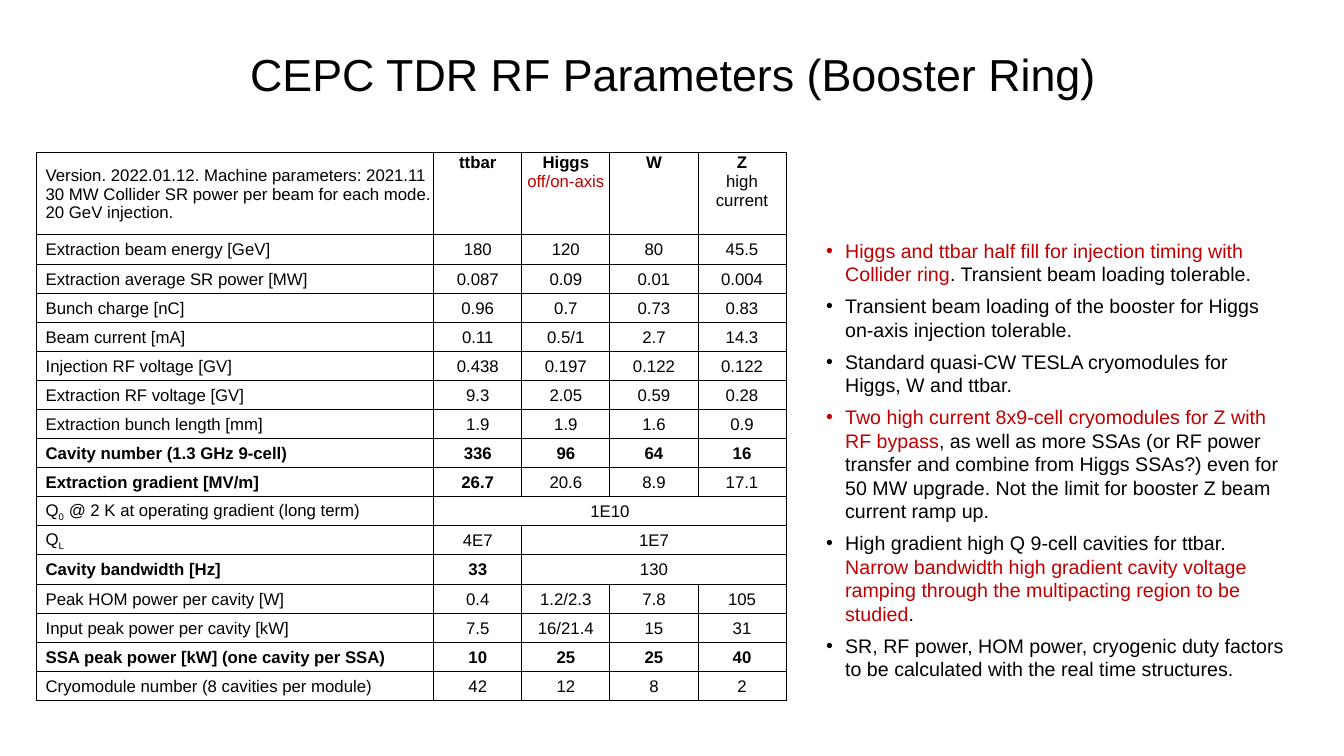
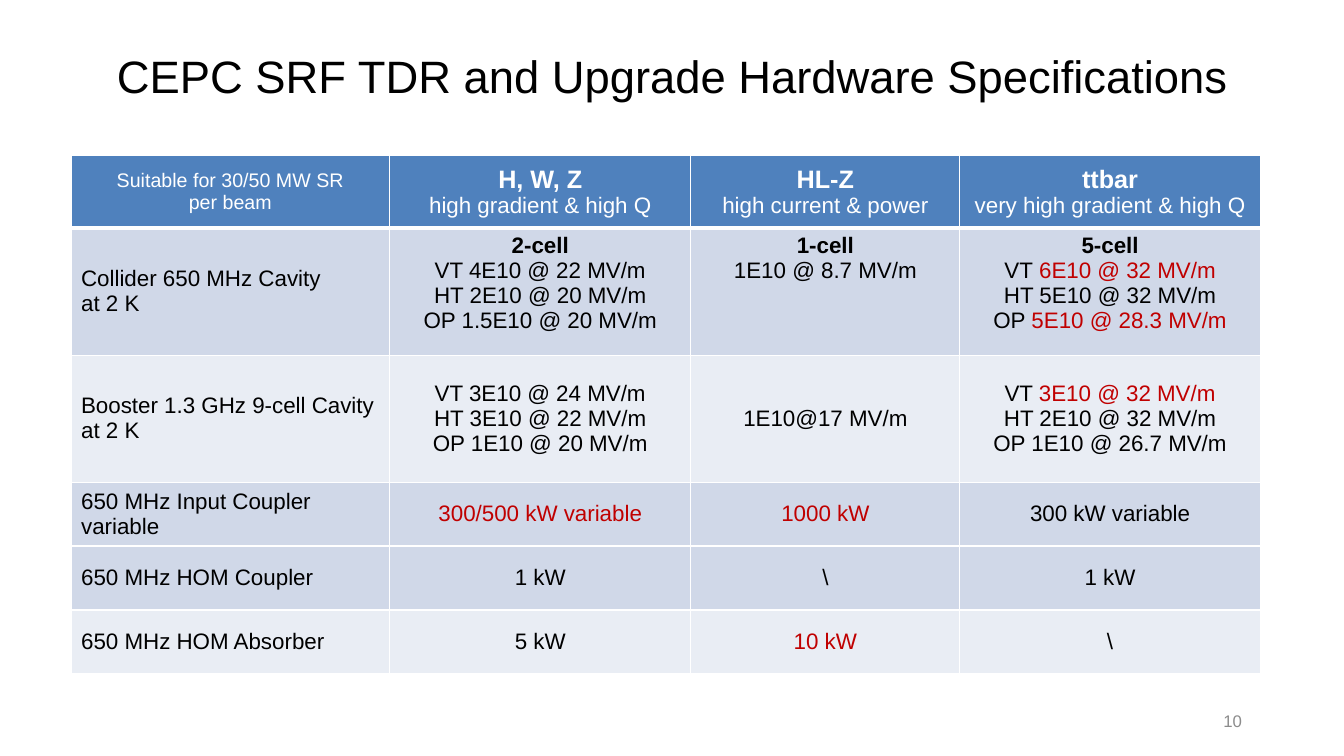
from lxml import etree
from pptx import Presentation
from pptx.dml.color import RGBColor
from pptx.enum.text import MSO_ANCHOR, PP_ALIGN
from pptx.oxml.ns import qn
from pptx.util import Cm, Pt

LEFT, CENTER, RIGHT = PP_ALIGN.LEFT, PP_ALIGN.CENTER, PP_ALIGN.RIGHT
TOP, MIDDLE = MSO_ANCHOR.TOP, MSO_ANCHOR.MIDDLE

FONT = "Arial"
BLACK, WHITE, GREY = "000000", "FFFFFF", "8C8C8C"
HEADER_BLUE, BAND_DARK, BAND_LIGHT = "4F81BD", "D0D8E8", "E9EDF4"

# Run styles
BOLD = {"bold": True}
RED = {"color": "C00000"}
SUB = {"baseline": -25000}
SMALL = {"size": 14}
HEADING = {"size": 18, "bold": True}

# A text is a string or a list of paragraphs; a paragraph is a string or a
# list of runs; a run is a string or a (string, style) pair.
BOOSTER_TITLE = "CEPC TDR RF Parameters (Booster Ring)"
BOOSTER_HEADER = [
    ["Version. 2022.01.12. Machine parameters: 2021.11",
     "30 MW Collider SR power per beam for each mode.",
     "20 GeV injection."],
    [[("ttbar", BOLD)]],
    [[("Higgs", BOLD)], [("off/on-axis", RED)]],
    [[("W", BOLD)]],
    [[("Z", BOLD)], "high current"],
]
# Label, values (the last one spans the remaining columns), number of bold cells
BOOSTER_ROWS = [
    ("Extraction beam energy [GeV]", ["180", "120", "80", "45.5"], 0),
    ("Extraction average SR power [MW]", ["0.087", "0.09", "0.01", "0.004"], 0),
    ("Bunch charge [nC]", ["0.96", "0.7", "0.73", "0.83"], 0),
    ("Beam current [mA]", ["0.11", "0.5/1", "2.7", "14.3"], 0),
    ("Injection RF voltage [GV]", ["0.438", "0.197", "0.122", "0.122"], 0),
    ("Extraction RF voltage [GV]", ["9.3", "2.05", "0.59", "0.28"], 0),
    ("Extraction bunch length [mm]", ["1.9", "1.9", "1.6", "0.9"], 0),
    ("Cavity number (1.3 GHz 9-cell)", ["336", "96", "64", "16"], 5),
    ("Extraction gradient [MV/m]", ["26.7", "20.6", "8.9", "17.1"], 2),
    ([["Q", ("0", SUB), " @ 2 K at operating gradient (long term)"]], ["1E10"], 0),
    ([["Q", ("L", SUB)]], ["4E7", "1E7"], 0),
    ("Cavity bandwidth [Hz]", ["33", "130"], 2),
    ("Peak HOM power per cavity [W]", ["0.4", "1.2/2.3", "7.8", "105"], 0),
    ("Input peak power per cavity [kW]", ["7.5", "16/21.4", "15", "31"], 0),
    ("SSA peak power [kW] (one cavity per SSA)", ["10", "25", "25", "40"], 5),
    ("Cryomodule number (8 cavities per module)", ["42", "12", "8", "2"], 0),
]
BOOSTER_NOTES = [
    [("Higgs and ttbar half fill for injection timing with Collider ring", RED),
     ". Transient beam loading tolerable."],
    "Transient beam loading of the booster for Higgs on-axis injection tolerable.",
    "Standard quasi-CW TESLA cryomodules for Higgs, W and ttbar.",
    [("Two high current 8x9-cell cryomodules for Z with RF bypass", RED),
     ", as well as more SSAs (or RF power transfer and combine from Higgs SSAs?) "
     "even for 50 MW upgrade. Not the limit for booster Z beam current ramp up."],
    ["High gradient high Q 9-cell cavities for ttbar. ",
     ("Narrow bandwidth high gradient cavity voltage ramping through the "
      "multipacting region to be studied", RED),
     "."],
    "SR, RF power, HOM power, cryogenic duty factors to be calculated with the "
    "real time structures.",
]

HARDWARE_TITLE = "CEPC SRF TDR and Upgrade Hardware Specifications"
HARDWARE_HEADER = [
    [[("Suitable for 30/50 MW SR", SMALL)], [("per beam", SMALL)]],
    [[("H, W, Z", HEADING)], "high gradient & high Q"],
    [[("HL-Z", HEADING)], "high current & power"],
    [[("ttbar", HEADING)], "very high gradient & high Q"],
]
# Band colour, anchor of the values, cells
HARDWARE_ROWS = [
    (BAND_DARK, TOP, [
        ["Collider 650 MHz Cavity", "at 2 K"],
        [[("2-cell", BOLD)], "VT 4E10 @ 22 MV/m", "HT 2E10 @ 20 MV/m",
         "OP 1.5E10 @ 20 MV/m"],
        [[("1-cell", BOLD)], "1E10 @ 8.7 MV/m"],
        [[("5-cell", BOLD)], ["VT", (" 6E10 @ 32 MV/m", RED)],
         "HT 5E10 @ 32 MV/m", ["OP ", ("5E10 @ 28.3 MV/m", RED)]]]),
    (BAND_LIGHT, MIDDLE, [
        "Booster 1.3 GHz 9-cell Cavity at 2 K",
        ["VT 3E10 @ 24 MV/m", "HT 3E10 @ 22 MV/m", "OP 1E10 @ 20 MV/m"],
        "1E10@17 MV/m",
        [["VT ", ("3E10 @ 32 MV/m", RED)], "HT 2E10 @ 32 MV/m",
         "OP 1E10 @ 26.7 MV/m"]]),
    (BAND_DARK, MIDDLE, [
        "650 MHz Input Coupler variable", [[("300/500 kW variable", RED)]],
        [[("1000 kW", RED)]], "300 kW variable"]),
    (BAND_DARK, MIDDLE, ["650 MHz HOM Coupler", "1 kW", "\\", "1 kW"]),
    (BAND_LIGHT, MIDDLE, [
        "650 MHz HOM Absorber", "5 kW", [[("10 kW", RED)]], "\\"]),
]
PAGE_NUMBER = "10"

BOOSTER_COLS = [10.01] + [2.22] * 4
BOOSTER_HEIGHT, BOOSTER_HEADER_HEIGHT = 13.81, 2.08
HARDWARE_COLS = [8.03, 7.59, 6.78, 7.57]
HARDWARE_HEIGHTS = [1.83, 3.2, 3.2, 1.61, 1.61, 1.61]


def rgb(color):
    return RGBColor.from_string(color)


def write(frame, text, size, align=LEFT, color=BLACK, bold=False, indent=0,
          hanging=0, space_before=0, line_spacing=None):
    """Fill a text frame; a hanging indent gives each paragraph a bullet."""
    paragraphs = [text] if isinstance(text, str) else text
    for number, runs in enumerate(paragraphs):
        paragraph = frame.add_paragraph() if number else frame.paragraphs[0]
        paragraph.alignment = align
        if number and space_before:
            paragraph.space_before = Pt(space_before)
        if line_spacing:
            paragraph.line_spacing = line_spacing
        properties = paragraph._p.get_or_add_pPr()
        properties.set("marL", str(Cm(indent)))
        properties.set("indent", str(-Cm(hanging)))
        if hanging:
            etree.SubElement(properties, qn("a:buFont")).set("typeface", FONT)
            etree.SubElement(properties, qn("a:buChar")).set("char", "•")
        for item in [runs] if isinstance(runs, str) else runs:
            words, style = (item, {}) if isinstance(item, str) else item
            run = paragraph.add_run()
            run.text = words
            run.font.name = FONT
            run.font.size = Pt(style.get("size", size))
            run.font.bold = style.get("bold", bold)
            run.font.color.rgb = rgb(style.get("color", color))
            if "baseline" in style:
                run._r.get_or_add_rPr().set("baseline", str(style["baseline"]))


def add_text(slide, box, text, size, anchor=MIDDLE, **style):
    frame = slide.shapes.add_textbox(*map(Cm, box)).text_frame
    frame.word_wrap = True
    frame.vertical_anchor = anchor
    write(frame, text, size, **style)


def add_title(slide, box, text, size):
    add_text(slide, box, text, size, align=CENTER, line_spacing=0.9)


def add_grid(slide, left, top, widths, heights):
    table = slide.shapes.add_table(
        len(heights), len(widths), Cm(left), Cm(top),
        Cm(sum(widths)), Cm(sum(heights))).table
    table.first_row = table.horz_banding = False
    for column, width in zip(table.columns, widths):
        column.width = Cm(width)
    for row, height in zip(table.rows, heights):
        row.height = Cm(height)
    return table


def format_cell(cell, line, width, fill=None, **side_widths):
    """Set borders (side_widths overrides single sides L, R, T, B), then fill."""
    properties = cell._tc.get_or_add_tcPr()
    for side in "LRTB":
        border = etree.SubElement(properties, qn("a:ln" + side))
        border.set("w", str(Pt(side_widths.get(side, width))))
        solid = etree.SubElement(border, qn("a:solidFill"))
        etree.SubElement(solid, qn("a:srgbClr")).set("val", line)
    if fill:
        cell.fill.solid()
        cell.fill.fore_color.rgb = rgb(fill)
    else:
        cell.fill.background()


def add_booster_table(slide):
    row_height = (BOOSTER_HEIGHT - BOOSTER_HEADER_HEIGHT) / len(BOOSTER_ROWS)
    heights = [BOOSTER_HEADER_HEIGHT] + [row_height] * len(BOOSTER_ROWS)
    table = add_grid(slide, 0.92, 3.84, BOOSTER_COLS, heights)
    for cell in table.iter_cells():
        format_cell(cell, BLACK, 0.75)
        cell.margin_left = cell.margin_right = cell.margin_top = Cm(0.03)
        cell.margin_bottom = 0
    rows = [(BOOSTER_HEADER[0], BOOSTER_HEADER[1:], 0)] + BOOSTER_ROWS
    last = len(BOOSTER_COLS) - 1
    for r, (label, values, bold_count) in enumerate(rows):
        for c, text in enumerate([label] + values):
            cell = table.cell(r, c)
            cell.vertical_anchor = MIDDLE if r or not c else TOP
            write(cell.text_frame, text, 12, align=CENTER if c else LEFT,
                  bold=c < bold_count, indent=0 if c else 0.2)
        if len(values) < last:
            table.cell(r, len(values)).merge(table.cell(r, last))


def add_hardware_table(slide):
    table = add_grid(slide, 1.79, 3.92, HARDWARE_COLS, HARDWARE_HEIGHTS)
    rows = [(HEADER_BLUE, MIDDLE, HARDWARE_HEADER)] + HARDWARE_ROWS
    thick_sides = {0: {"B": 3}, 1: {"T": 3}}
    for r, (band, anchor, texts) in enumerate(rows):
        for c, text in enumerate(texts):
            cell = table.cell(r, c)
            format_cell(cell, WHITE, 1, band, **thick_sides.get(r, {}))
            cell.vertical_anchor = anchor if c else MIDDLE
            write(cell.text_frame, text, 16, color=BLACK if r else WHITE,
                  align=LEFT if r and not c else CENTER)


def main():
    deck = Presentation()
    deck.slide_width, deck.slide_height = Cm(33.87), Cm(19.05)
    blank = deck.slide_layouts[6]

    booster = deck.slides.add_slide(blank)
    add_booster_table(booster)
    add_title(booster, (0.08, 0.81, 33.78, 2.24), BOOSTER_TITLE, 32)
    add_text(booster, (20.57, 5.89, 12.14, 12.22), BOOSTER_NOTES, 14, anchor=TOP,
             indent=0.48, hanging=0.48, space_before=6)

    hardware = deck.slides.add_slide(blank)
    add_title(hardware, (2.34, 0.74, 29.21, 2.49), HARDWARE_TITLE, 32.4)
    add_text(hardware, (23.93, 17.65, 7.62, 1.02), PAGE_NUMBER, 12,
             align=RIGHT, color=GREY)
    add_hardware_table(hardware)

    deck.save("out.pptx")


if __name__ == "__main__":
    main()
